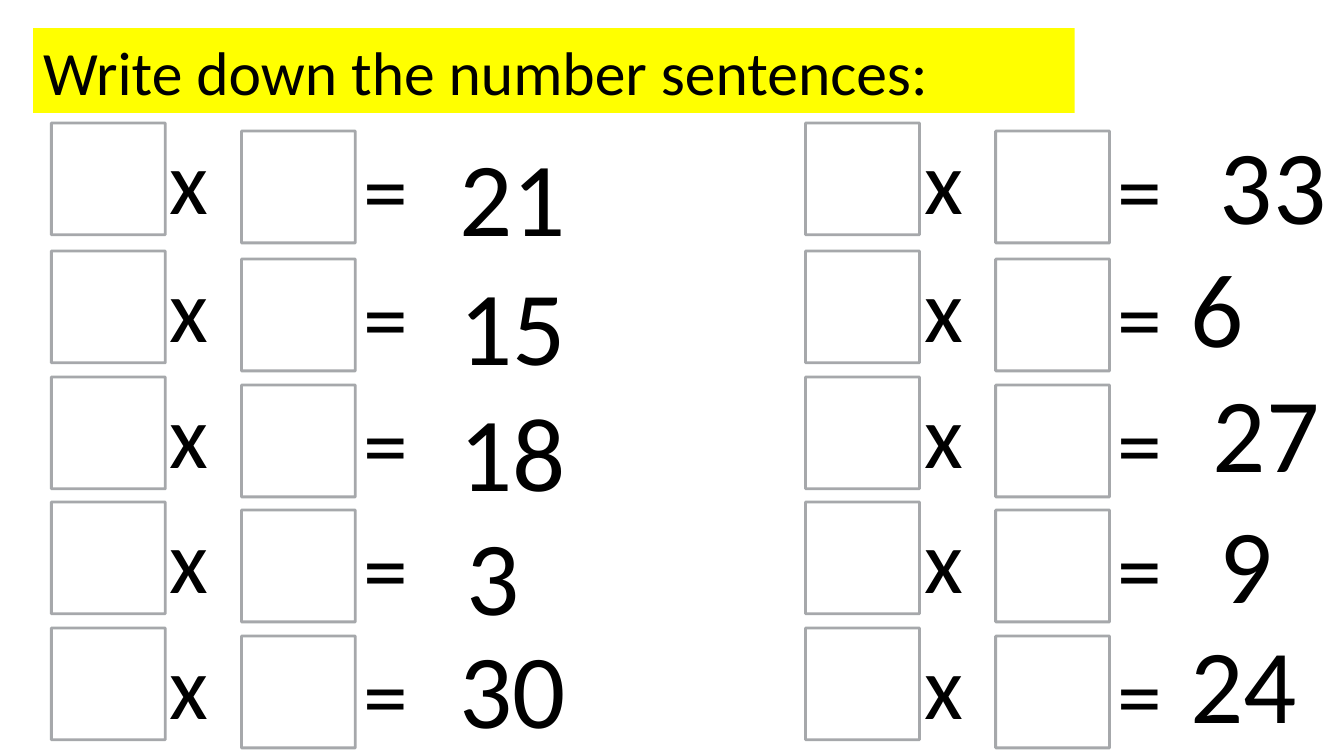
from lxml.etree import SubElement
from pptx import Presentation
from pptx.dml.color import RGBColor
from pptx.enum.shapes import MSO_SHAPE as Preset
from pptx.enum.text import MSO_ANCHOR as Anchor, MSO_AUTO_SIZE as AutoSize
from pptx.oxml.ns import qn
from pptx.util import Inches, Pt

COLOURS = {"ink": "000000", "banner": "FFFF00", "box": "FFFFFF", "outline": "85888D"}
ROW_TOPS = (12.2, 24.9, 37.4, 49.8, 62.3)
BLOCK_LEFTS = (5.1, 79.9)
ANSWERS = (
    (("21", 45, 12.4), ("15", 45, 25.2), ("18", 45, 37.7),
     ("3", 45.7, 50), ("30", 45, 61.3)),
    (("33", 120.4, 11.3), ("6", 117.5, 23.5), ("27", 119.7, 35.9),
     ("9", 120.4, 48.9), ("24", 117.5, 60.8)),
)


class Worksheet:
    """Draws sums on one slide, on a grid of ten columns and rows to the inch."""

    font = "Calibri"
    opacity = "72000"
    cell = Inches(0.1)

    def __init__(self, slide):
        self.slide = slide
        self.shapes = slide.shapes

    def place(self, *lengths):
        return [round(length * self.cell) for length in lengths]

    def paint(self, fill, name):
        fill.solid()
        fill.fore_color.rgb = RGBColor.from_string(COLOURS[name])

    def add_text(self, text, column, row, width, height, size=64, inset=0.6,
                 anchor=Anchor.MIDDLE, fill=None):
        label = self.shapes.add_textbox(*self.place(column, row, width, height))
        if fill:
            self.paint(label.fill, fill)
        frame = label.text_frame
        frame.word_wrap = False
        frame.auto_size = AutoSize.SHAPE_TO_FIT_TEXT
        frame.vertical_anchor = anchor
        frame.margin_left = frame.margin_right = round(inset * self.cell)
        frame.margin_top = frame.margin_bottom = Inches(0.06)
        run = frame.paragraphs[0].add_run()
        run.text = text
        run.font.name = self.font
        run.font.size = Pt(size)
        self.paint(run.font.fill, "ink")

    def blank(self, column, row):
        box = self.shapes.add_shape(
            Preset.RECTANGLE, *self.place(column, row, 11.3, 11.1))
        box.shadow.inherit = False
        self.paint(box.fill, "box")
        box.line.width = Pt(2)
        self.paint(box.line.fill, "outline")
        for rgb in box.element.iter(qn("a:srgbClr")):
            SubElement(rgb, qn("a:alpha"), val=self.opacity)

    def sentence(self, column, row):
        self.shapes = self.slide.shapes.add_group_shape().shapes
        self.add_text("x", column + 11.15, row - 0.35, 8.2, 11.8)
        self.blank(column + 18.85, row + 0.8)
        self.blank(column, row)
        self.add_text("=", column + 30.35, row + 0.5, 9.6, 11.8)
        self.shapes = self.slide.shapes

    def answer(self, number, column, row):
        width = 11.8 if len(number) > 1 else 6.5
        self.add_text(number, column, row, width, 13.7, size=75)


def main():
    deck = Presentation()
    deck.slide_width, deck.slide_height = Inches(13.33), Inches(7.5)
    sheet = Worksheet(deck.slides.add_slide(deck.slide_layouts[6]))
    sheet.add_text("Write down the number sentences:", 3.3, 2.8, 103.3, 8.4,
                   size=44, inset=1, anchor=Anchor.TOP, fill="banner")
    for block_left, answers in zip(BLOCK_LEFTS, ANSWERS):
        for row_top, answer in zip(ROW_TOPS, answers):
            sheet.sentence(block_left, row_top)
            sheet.answer(*answer)
    deck.save("out.pptx")


if __name__ == "__main__":
    main()
